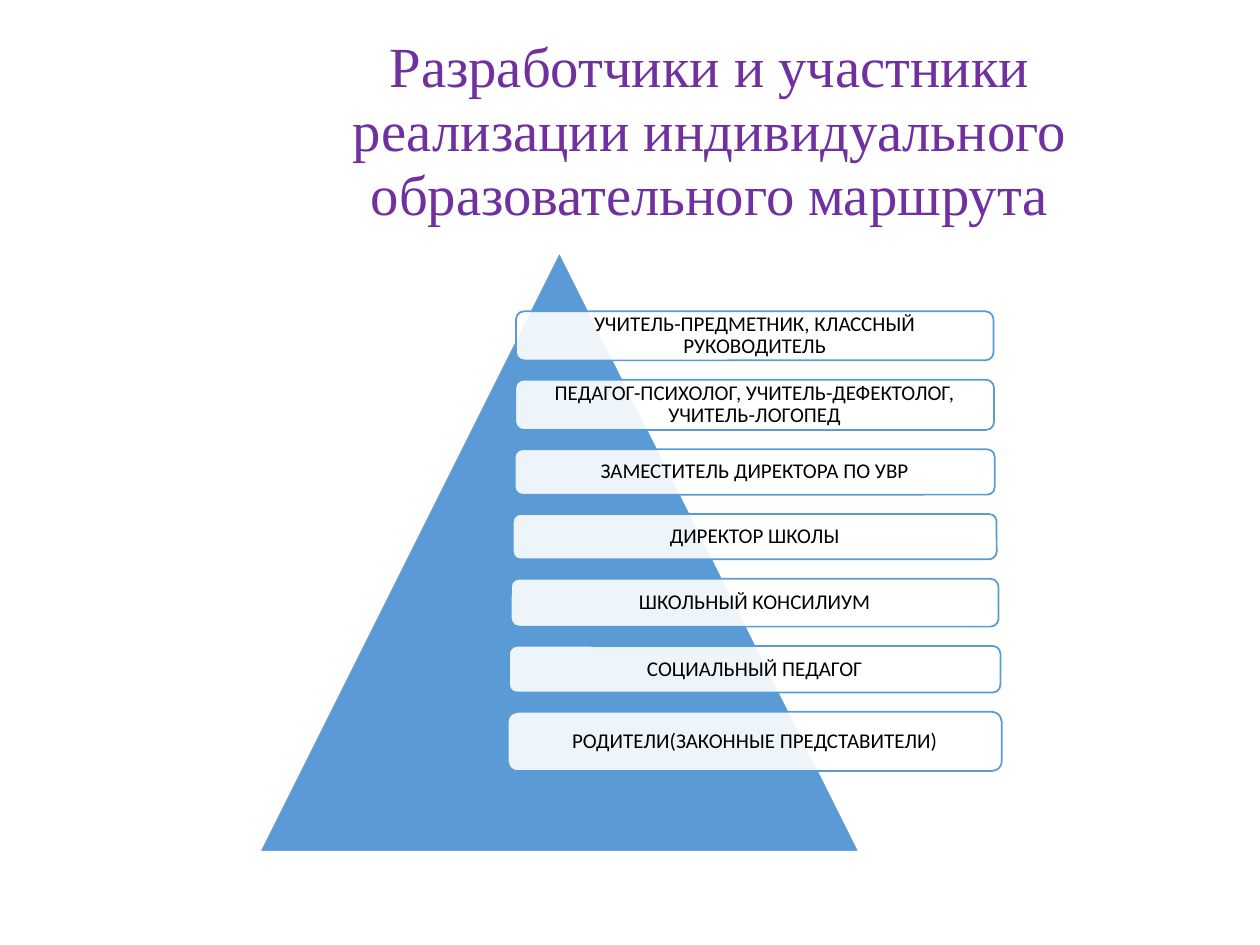
from dataclasses import dataclass

from lxml.etree import SubElement
from pptx import Presentation
from pptx.dml.color import RGBColor
from pptx.enum.shapes import MSO_SHAPE as Shape
from pptx.enum.text import MSO_ANCHOR as Anchor, PP_ALIGN as Align
from pptx.oxml.ns import qn
from pptx.util import Inches, Pt


@dataclass(frozen=True)
class Theme:
    """Colours, fonts and type sizes of the slide."""
    white: RGBColor = RGBColor(0xFF, 0xFF, 0xFF)
    black: RGBColor = RGBColor(0, 0, 0)
    blue: RGBColor = RGBColor(0x5B, 0x9B, 0xD5)
    purple: RGBColor = RGBColor(0x70, 0x30, 0xA0)
    title_font: str = "Times New Roman"
    body_font: str = "Calibri"
    title_size: float = 32.4
    body_size: float = 12


THEME = Theme()
TITLE = "Разработчики и участники реализации индивидуального\vобразовательного маршрута"
ROLES = [
    ("УЧИТЕЛЬ-ПРЕДМЕТНИК, КЛАССНЫЙ РУКОВОДИТЕЛЬ", 3.79, 0.39),
    ("ПЕДАГОГ-ПСИХОЛОГ, УЧИТЕЛЬ-ДЕФЕКТОЛОГ, УЧИТЕЛЬ-ЛОГОПЕД", 3.8, 0.4),
    ("ЗАМЕСТИТЕЛЬ ДИРЕКТОРА ПО УВР", 3.81, 0.36),
    ("ДИРЕКТОР ШКОЛЫ", 3.84, 0.36),
    ("ШКОЛЬНЫЙ КОНСИЛИУМ", 3.87, 0.38),
    ("СОЦИАЛЬНЫЙ ПЕДАГОГ", 3.9, 0.37),
    ("РОДИТЕЛИ(ЗАКОННЫЕ ПРЕДСТАВИТЕЛИ)", 3.92, 0.47),
]


def write(sp, text, font, size, color, spacing):
    """Fill a shape with one centred paragraph."""
    tf = sp.text_frame
    tf.text = text
    tf.word_wrap = True
    tf.vertical_anchor = Anchor.MIDDLE
    p = tf.paragraphs[0]
    p.alignment = Align.CENTER
    p.line_spacing = spacing
    for r in p.runs:
        r.font.name = font
        r.font.size = Pt(size)
        r.font.color.rgb = color
    return tf


def add_figure(s, kind, box, fill, line):
    """Add a preset shape with a solid fill and a thin outline."""
    sp = s.shapes.add_shape(kind, *map(Inches, box))
    sp.shadow.inherit = False
    sp.fill.solid()
    sp.fill.fore_color.rgb = fill
    sp.line.color.rgb = line
    sp.line.width = Pt(1)
    return sp


def add_title(s, box):
    """Place the heading in its box."""
    sp = s.shapes.add_textbox(*map(Inches, box))
    tf = write(sp, TITLE, THEME.title_font, THEME.title_size, THEME.purple, 0.94)
    tf.margin_bottom = Inches(0.2)


def add_role(s, box, text):
    """Place one translucent rounded label."""
    sp = add_figure(s, Shape.ROUNDED_RECTANGLE, box, THEME.white, THEME.blue)
    color = sp.fill._xPr.find(qn("a:solidFill"))[0]
    SubElement(color, qn("a:alpha"), val="90000")
    tf = write(sp, text, THEME.body_font, THEME.body_size, THEME.black, 0.9)
    tf.margin_left = tf.margin_right = Inches(0.05)
    tf.margin_top = tf.margin_bottom = Inches(0.05)


def add_roles(s, box):
    """Stack the labels on a common centre line with equal gaps."""
    left, top, width, height = box
    gap = (height - sum(h for _, _, h in ROLES)) / (len(ROLES) - 1)
    for text, w, h in ROLES:
        add_role(s, (left + (width - w) / 2, top, w, h), text)
        top += h + gap


def add_pyramid(s, box):
    """Place the triangle and the stack of labels over its right half."""
    left, top, width, height = box
    add_figure(s, Shape.ISOSCELES_TRIANGLE, box, THEME.blue, THEME.white)
    add_roles(s, (left + 1.97, top + 0.47, 3.92, 3.65))


def main():
    """Build and save the slide."""
    prs = Presentation()
    prs.slide_width, prs.slide_height = Inches(10), Inches(7.5)
    s = prs.slides.add_slide(prs.slide_layouts[6])
    add_title(s, (1.94, 0.4, 7.38, 1.45))
    add_pyramid(s, (2.06, 2, 4.76, 4.76))
    prs.save("out.pptx")


if __name__ == "__main__":
    main()
